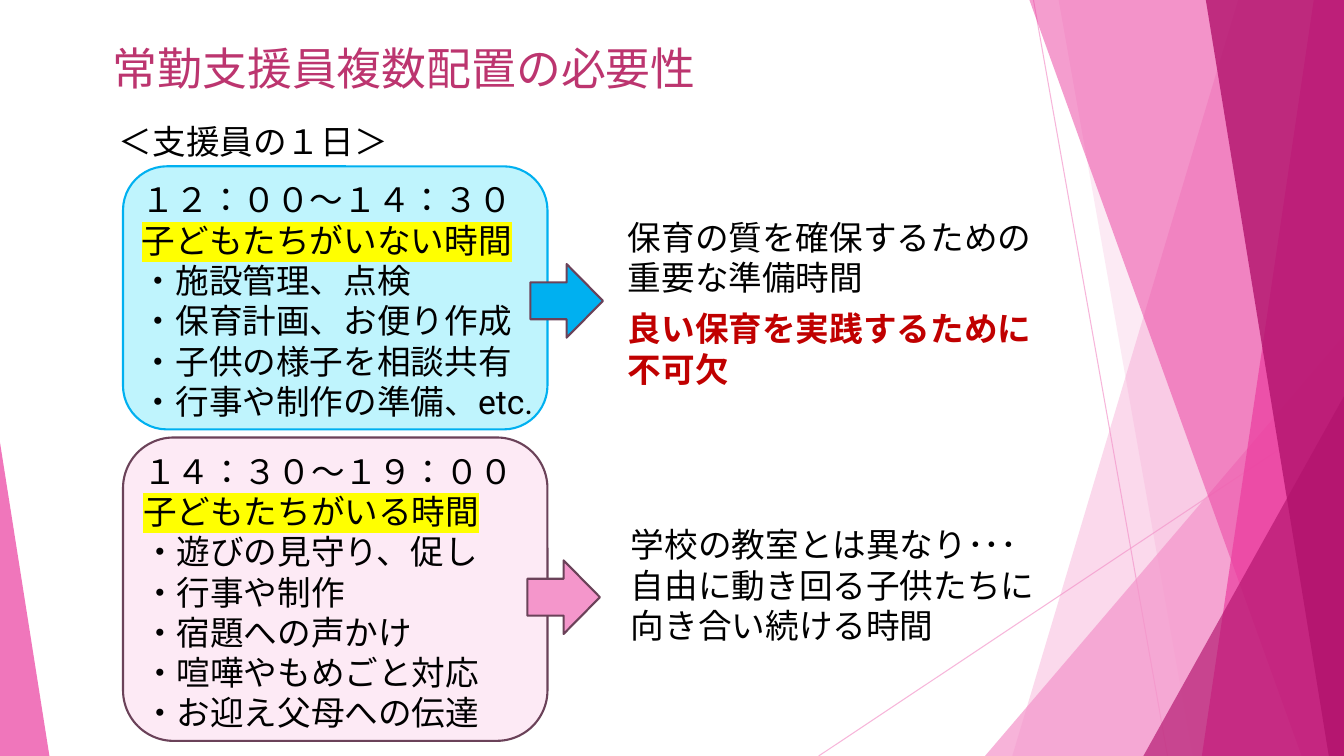
from dataclasses import dataclass

from lxml import etree
from pptx import Presentation
from pptx.dml.color import RGBColor
from pptx.enum.shapes import MSO_CONNECTOR, MSO_SHAPE
from pptx.oxml.ns import qn
from pptx.util import Inches, Pt

STRAIGHT = MSO_CONNECTOR.STRAIGHT
TRIANGLE = MSO_SHAPE.ISOSCELES_TRIANGLE
ROUNDED = MSO_SHAPE.ROUNDED_RECTANGLE
ARROW = MSO_SHAPE.RIGHT_ARROW


@dataclass(frozen=True)
class Theme:
    title: str = "BC356F"
    text: str = "000000"
    emphasis: str = "C00000"
    marker: str = "FFFF00"
    light_pink: str = "F496CB"
    pink: str = "EB3D9F"
    deep_pink: str = "B2136D"
    pale_pink: str = "FDEAF5"
    plum: str = "6B4259"
    blue: str = "00B0F0"
    pale_blue: str = "BFF4FD"
    title_font: str = "Noto Sans CJK JP"
    body_font: str = "Roboto"
    title_size: int = 32
    body_size: int = 24
    line_pitch: float = 28.8
    outline: float = 1.5
    hairline: float = 0.75


THEME = Theme()
WIDTH, HEIGHT = 13.33, 7.5


def rgb(color):
    return RGBColor.from_string(color)


def set_alpha(fill_parent, percent):
    """Make the solid fill below an element partly transparent."""
    color = fill_parent.find(".//" + qn("a:srgbClr"))
    etree.SubElement(color, qn("a:alpha")).set("val", str(percent * 1000))


def paint(shape, fill, alpha=None, line=None):
    shape.shadow.inherit = False
    shape.fill.solid()
    shape.fill.fore_color.rgb = rgb(fill)
    if alpha:
        set_alpha(shape.fill._xPr, alpha)
    if line:
        shape.line.color.rgb = rgb(line)
        shape.line.width = Pt(THEME.outline)
    else:
        shape.line.fill.background()


def add_preset(slide, kind, box, fill, alpha=None, line=None, adjust=None):
    shape = slide.shapes.add_shape(kind, *map(Inches, box))
    if adjust is not None:
        shape.adjustments[0] = adjust
    paint(shape, fill, alpha, line)


def add_ray(slide, start, end):
    ray = slide.shapes.add_connector(STRAIGHT, *map(Inches, start + end))
    ray.line.color.rgb = rgb(THEME.light_pink)
    ray.line.width = Pt(THEME.hairline)
    properties = ray._element.spPr
    set_alpha(properties, 70)
    etree.SubElement(properties, qn("a:effectLst"))


def add_band(slide, top_left, bottom_left, fill, alpha):
    """Full-height band from a slanted left edge to the right slide edge."""
    corners = [(top_left, 0), (WIDTH, 0), (WIDTH, HEIGHT), (bottom_left, HEIGHT)]
    points = [(Inches(x), Inches(y)) for x, y in corners]
    builder = slide.shapes.build_freeform(*points[0])
    builder.add_line_segments(points[1:], close=True)
    paint(builder.convert_to_shape(), fill, alpha)


def add_text(slide, box, lines, color=THEME.text, size=THEME.body_size,
             font=THEME.body_font, bold=False, pitch=THEME.line_pitch, marked=None):
    frame = slide.shapes.add_textbox(*map(Inches, box)).text_frame
    frame.word_wrap = True
    frame.text = "\n".join(lines)
    for index, paragraph in enumerate(frame.paragraphs):
        if pitch:
            paragraph.line_spacing = Pt(pitch)
        run = paragraph.runs[0]
        run.font.size = Pt(size)
        run.font.bold = bold
        run.font.color.rgb = rgb(color)
        properties = run._r.get_or_add_rPr()
        properties.set("lang", "ja-JP")
        if index == marked:
            highlight = etree.SubElement(properties, qn("a:highlight"))
            etree.SubElement(highlight, qn("a:srgbClr")).set("val", THEME.marker)
        for script in ("a:latin", "a:ea"):
            etree.SubElement(properties, qn(script)).set("typeface", font)


def add_period(slide, top, height, fill, line, text_box, lines):
    """Rounded panel for one part of the day, with its second line marked."""
    add_preset(slide, ROUNDED, (1.22, top, 4.21, height), fill, line=line)
    add_text(slide, text_box, lines, marked=1)


def add_backdrop(slide):
    add_ray(slide, (10.25, 0), (11.58, HEIGHT))
    add_ray(slide, (WIDTH, 4.03), (8.12, HEIGHT))
    add_band(slide, 12.28, 10.04, THEME.light_pink, 36)
    add_band(slide, 10.5, 11.83, THEME.light_pink, 20)
    add_preset(slide, TRIANGLE, (9.77, 3.33, 3.56, 4.17), THEME.light_pink, 72, adjust=1)
    add_band(slide, 10.21, 12.91, THEME.pink, 50)
    add_band(slide, 13.03, 11.92, THEME.pink, 70)
    add_band(slide, 11.96, 13.18, THEME.deep_pink, 80)
    add_preset(slide, TRIANGLE, (11.34, 3.93, 1.99, 3.57), THEME.deep_pink, 66, adjust=1)
    add_preset(slide, TRIANGLE, (0, 4.39, 0.49, 3.11), THEME.pink, 70, adjust=0)


def main():
    deck = Presentation()
    deck.slide_width, deck.slide_height = Inches(WIDTH), Inches(HEIGHT)
    slide = deck.slides.add_slide(deck.slide_layouts[6])
    add_backdrop(slide)

    # Headings
    add_text(slide, (1.02, 0.35, 8.6, 0.64), ["常勤支援員複数配置の必要性"],
             THEME.title, THEME.title_size, THEME.title_font, pitch=38.4)
    add_text(slide, (1.08, 1.15, 4.01, 0.5), ["＜支援員の１日＞"])

    # The two parts of the day
    add_period(slide, 4.34, 3.01, THEME.pale_pink, THEME.plum, (1.32, 4.42, 4.01, 2.93), [
        "１４：３０～１９：００", "子どもたちがいる時間", "・遊びの見守り、促し",
        "・行事や制作", "・宿題への声かけ", "・喧嘩やもめごと対応",
        "・お迎え父母への伝達"])
    add_period(slide, 1.65, 2.61, THEME.pale_blue, THEME.blue, (1.31, 1.73, 4.64, 2.52), [
        "１２：００～１４：３０", "子どもたちがいない時間", "・施設管理、点検",
        "・保育計画、お便り作成", "・子供の様子を相談共有", "・行事や制作の準備、etc."])

    # What each part means
    add_preset(slide, ARROW, (5.26, 2.62, 0.72, 0.73), THEME.blue, line=THEME.plum)
    add_text(slide, (6.13, 2.1, 4.8, 0.91), ["保育の質を確保するための", "重要な準備時間"])
    add_text(slide, (6.13, 3.01, 4.46, 0.91), ["良い保育を実践するために不可欠"],
             THEME.emphasis, bold=True)
    add_preset(slide, ARROW, (5.23, 5.56, 0.72, 0.73), THEME.light_pink, line=THEME.plum)
    add_text(slide, (6.16, 5.15, 4.31, 1.31), [
        "学校の教室とは異なり･･･", "自由に動き回る子供たちに", "向き合い続ける時間"])

    deck.save("out.pptx")


if __name__ == "__main__":
    main()
